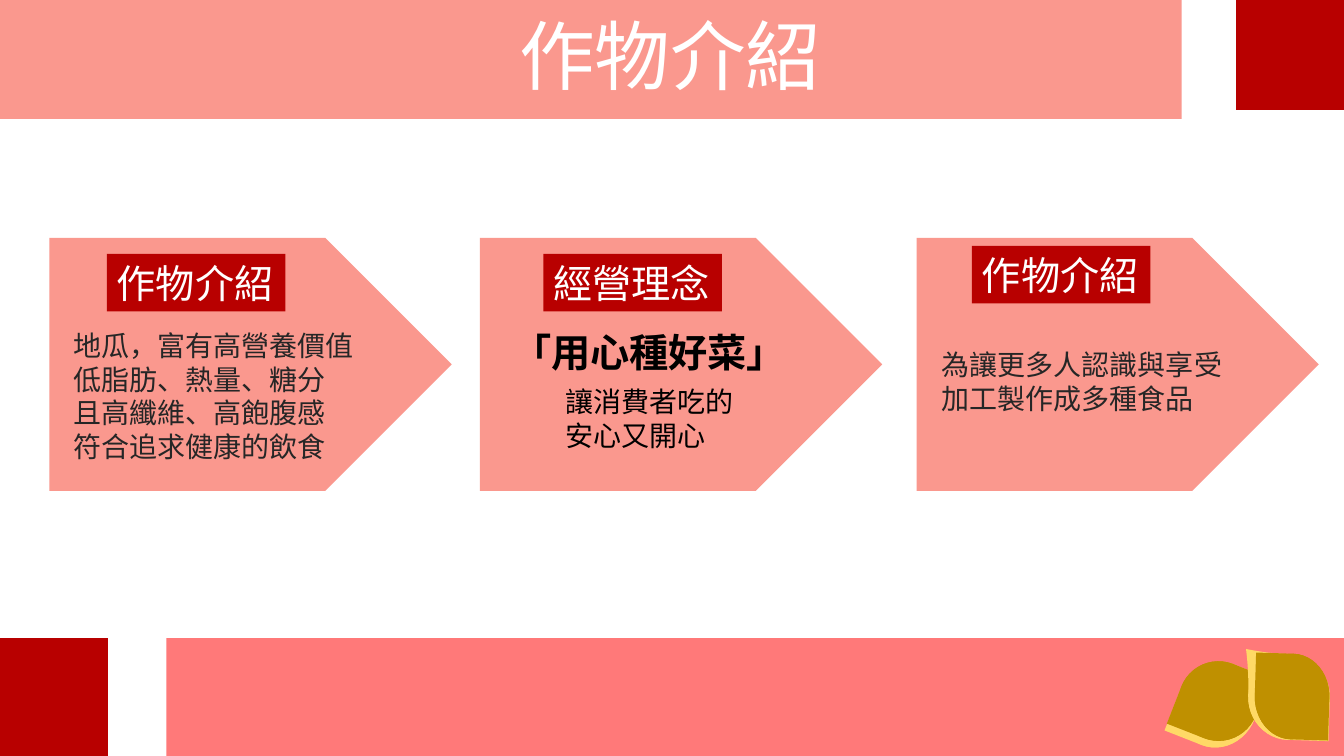
from pptx import Presentation
from pptx.dml.color import RGBColor
from pptx.enum.shapes import MSO_SHAPE
from pptx.enum.text import MSO_ANCHOR, MSO_AUTO_SIZE, PP_ALIGN
from pptx.util import Pt
from lxml import etree

RECTANGLE = MSO_SHAPE.RECTANGLE
PENTAGON = MSO_SHAPE.PENTAGON
TEARDROP = MSO_SHAPE.TEAR
TOP, MIDDLE = MSO_ANCHOR.TOP, MSO_ANCHOR.MIDDLE
LEFT = PP_ALIGN.LEFT
FIT_SHAPE = MSO_AUTO_SIZE.SHAPE_TO_FIT_TEXT

EMU_PER_PX = 9144
PAGE_SIZE = (1333, 750)
DRAWING_NS = "http://schemas.openxmlformats.org/drawingml/2006/main"

THEME = {
    "font": "Noto Sans CJK SC",
    "line_ratio": 1.2,
    "title": 54,
    "label": 28,
    "body": 20,
    "salmon": "FA988E",
    "coral": "FF7979",
    "red": "B80000",
    "yellow": "FFD966",
    "gold": "BF9000",
    "white": "FFFFFF",
    "black": "000000",
    "dark": "262626",
}

BANDS = [
    ((0, -1, 1172, 119), "salmon"),
    ((1226, 0, 107, 109), "red"),
    ((165, 633, 1168, 117), "coral"),
    ((0, 633, 107, 117), "red"),
]
TITLE = ("作物介紹", (505, 4, 323, 101))

LEAVES = [
    ((1168, 656, 79, 86), 21.4, "yellow", 1),
    ((1169, 656, 79, 79), 21.4, "gold", 1),
    ((1236, 651, 85, 81), 91.8, "yellow", 1.09),
    ((1239, 654, 85, 74), 91.8, "gold", 1),
]

ARROW_TOP, ARROW_WIDTH, ARROW_HEIGHT = 236, 399, 251
LABEL_WIDTH, LABEL_HEIGHT = 177, 57
ARROWS = [
    {
        "left": 49,
        "label": ("作物介紹", 106, 252),
        "texts": [
            ((63, 321, 301, 145), "body", "dark", False,
             ["地瓜，富有高營養價值", "低脂肪、熱量、糖分", "且高纖維、高飽腹感", "符合追求健康的飲食"]),
        ],
    },
    {
        "left": 476,
        "label": ("經營理念", 539, 252),
        "texts": [
            ((498, 321, 295, 57), "label", "black", True, ["「用心種好菜」"]),
            ((551, 377, 188, 77), "body", "black", False, ["讓消費者吃的", "安心又開心"]),
        ],
    },
    {
        "left": 909,
        "label": ("作物介紹", 964, 244),
        "texts": [
            ((924, 340, 301, 77), "body", "dark", False,
             ["為讓更多人認識與享受", "加工製作成多種食品"]),
        ],
    },
]


def scale(box):
    return [length * EMU_PER_PX for length in box]


def color(name):
    return RGBColor.from_string(THEME[name])


def add_block(page, kind, box, fill, rotation=0):
    shape = page.shapes.add_shape(kind, *scale(box))
    shape.shadow.inherit = False
    shape.fill.solid()
    shape.fill.fore_color.rgb = color(fill)
    shape.line.fill.background()
    shape.rotation = rotation
    return shape


def write(shape, lines, size, ink, bold=False, anchor=TOP):
    frame = shape.text_frame
    frame.word_wrap = False
    frame.auto_size = FIT_SHAPE
    frame.vertical_anchor = anchor
    for index, line in enumerate(lines):
        para = frame.add_paragraph() if index else frame.paragraphs[0]
        para.alignment = LEFT
        para.line_spacing = Pt(THEME[size] * THEME["line_ratio"])
        span = para.add_run()
        span.text = line
        span.font.name = THEME["font"]
        span.font.size = Pt(THEME[size])
        span.font.bold = bold
        span.font.color.rgb = color(ink)
        east_asian = etree.Element(f"{{{DRAWING_NS}}}ea", typeface=THEME["font"])
        span.font._element.find(f"{{{DRAWING_NS}}}latin").addnext(east_asian)


def add_text(page, box, lines, size, ink, bold=False):
    write(page.shapes.add_textbox(*scale(box)), lines, size, ink, bold)


def add_leaf(page, box, angle, fill, point):
    add_block(page, TEARDROP, box, fill, angle)
    tip = add_block(page, TEARDROP, box, fill, angle + 180)
    tip.adjustments[0] = point


def add_arrow(page, arrow):
    add_block(page, PENTAGON, (arrow["left"], ARROW_TOP, ARROW_WIDTH, ARROW_HEIGHT), "salmon")
    name, left, top = arrow["label"]
    label = add_block(page, RECTANGLE, (left, top, LABEL_WIDTH, LABEL_HEIGHT), "red")
    write(label, [name], "label", "white", anchor=MIDDLE)
    for box, size, ink, bold, lines in arrow["texts"]:
        add_text(page, box, lines, size, ink, bold)


def main():
    deck = Presentation()
    deck.slide_width, deck.slide_height = scale(PAGE_SIZE)
    page = deck.slides.add_slide(deck.slide_layouts[6])
    for box, fill in BANDS:
        add_block(page, RECTANGLE, box, fill)
    title, title_box = TITLE
    add_text(page, title_box, [title], "title", "white")
    for leaf in LEAVES:
        add_leaf(page, *leaf)
    for arrow in ARROWS:
        add_arrow(page, arrow)
    deck.save("out.pptx")


if __name__ == "__main__":
    main()
